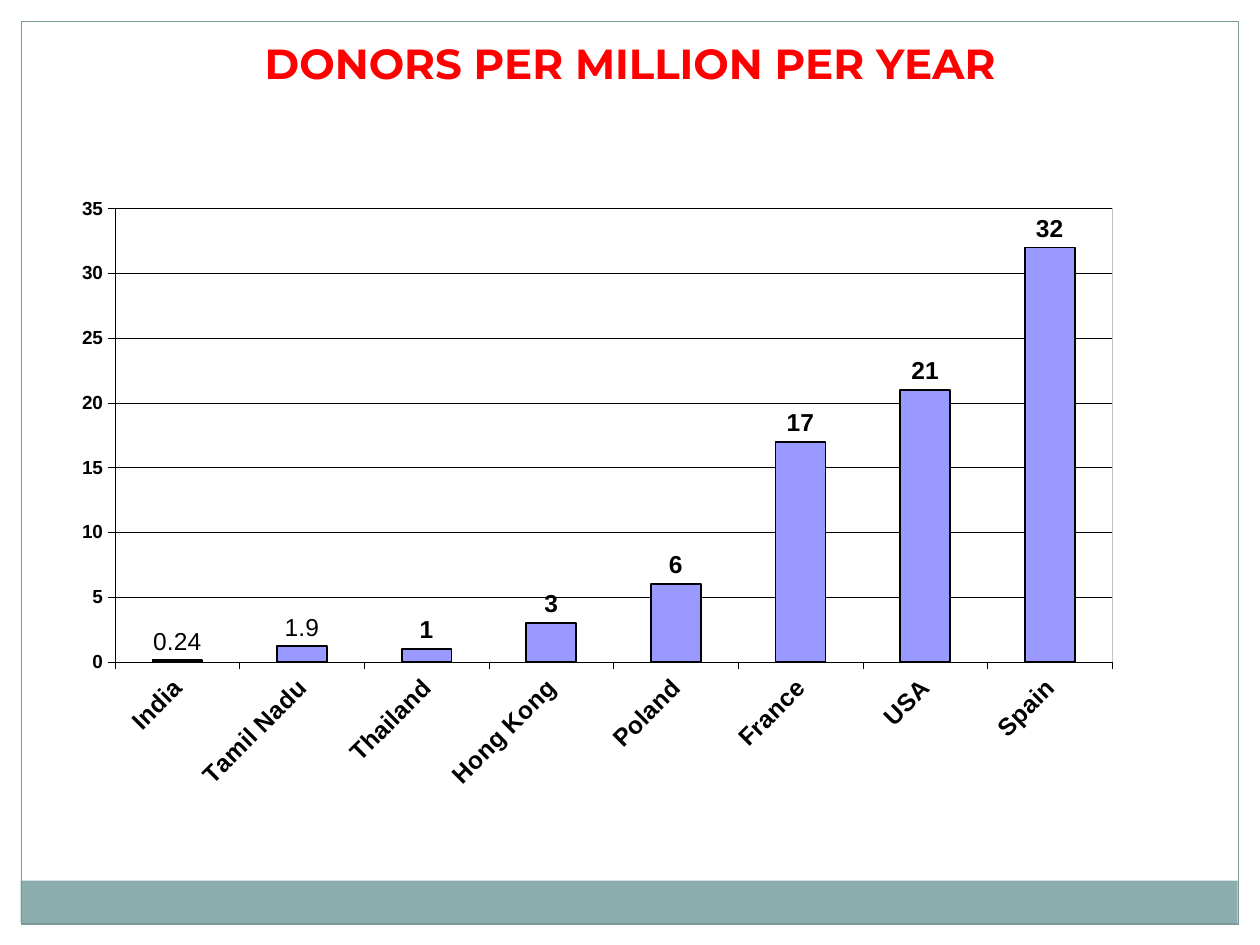
"""Build a slide with a column chart of organ donors per million per year."""
from lxml.etree import SubElement
from pptx import Presentation
from pptx.chart.data import CategoryChartData
from pptx.dml.color import RGBColor
from pptx.enum.chart import XL_CHART_TYPE, XL_LABEL_POSITION, XL_TICK_MARK
from pptx.enum.shapes import MSO_SHAPE
from pptx.enum.text import MSO_AUTO_SIZE, PP_ALIGN
from pptx.oxml import parse_xml
from pptx.oxml.ns import nsdecls, qn
from pptx.util import Pt

BLACK = RGBColor(0x00, 0x00, 0x00)
WHITE = RGBColor(0xFF, 0xFF, 0xFF)
RED = RGBColor(0xFF, 0x00, 0x00)
LAVENDER = RGBColor(0x99, 0x99, 0xFF)
SAGE = RGBColor(0x8C, 0xAD, 0xAE)
FRAME_GREY = RGBColor(0x7C, 0x99, 0x9A)

DONORS = {"India": 0.12, "Tamil Nadu": 1.2, "Thailand": 1, "Hong Kong": 3,
          "Poland": 6, "France": 17, "USA": 21, "Spain": 32}
WRITTEN_LABELS = {0: "0.24", 1: "1.9"}
PLOT_LAYOUT = {"layoutTarget": "inner", "xMode": "edge", "yMode": "edge",
               "x": 0.0542, "y": 0.0982, "w": 0.8633, "h": 0.6167}
BANDS = [
    (0, 0, 720, 12, WHITE),
    (708, 0, 12, 540, WHITE),
    (0, 0, 12, 540, WHITE),
    (11.8, 503.2, 695.5, 24.5, SAGE),
]


def style_font(font, size, bold, color=BLACK, name="Arial"):
    font.size = Pt(size)
    font.bold = bold
    font.color.rgb = color
    font.name = name


def style_line(line, width, color=BLACK):
    line.color.rgb = color
    line.width = Pt(width)


deck = Presentation()
deck.slide_width, deck.slide_height = Pt(720), Pt(540)
slide = deck.slides.add_slide(deck.slide_layouts[6])

for left, top, width, height, color in BANDS:
    band = slide.shapes.add_shape(MSO_SHAPE.RECTANGLE, Pt(left), Pt(top), Pt(width), Pt(height))
    band.shadow.inherit = False
    band.fill.solid()
    band.fill.fore_color.rgb = color
    band.line.fill.background()

border = slide.shapes.add_shape(MSO_SHAPE.RECTANGLE, Pt(12.2), Pt(12.2), Pt(695.5), Pt(515.8))
border.shadow.inherit = False
border.fill.background()
style_line(border.line, 0.75, FRAME_GREY)

donor_data = CategoryChartData()
donor_data.categories = list(DONORS)
donor_data.add_series("Series 1", list(DONORS.values()))
chart = slide.shapes.add_chart(XL_CHART_TYPE.COLUMN_CLUSTERED, Pt(30), Pt(78),
                               Pt(660), Pt(420), donor_data).chart
chart.has_legend = False
chart.has_title = False
style_font(chart.font, 10, False)

countries, rate = chart.category_axis, chart.value_axis
for axis, size in ((countries, 14), (rate, 10.8)):
    style_font(axis.tick_labels.font, size, True)
    style_line(axis.format.line, 0.25)
    axis.major_tick_mark = XL_TICK_MARK.OUTSIDE
    axis.minor_tick_mark = XL_TICK_MARK.NONE
countries.tick_labels.font._element.getparent().getparent().getparent().find(
    qn("a:bodyPr")).set("rot", "-2700000")
rate.minimum_scale, rate.maximum_scale, rate.major_unit = 0, 35, 5
rate.has_major_gridlines = True
style_line(rate.major_gridlines.format.line, 0.25)

columns = chart.plots[0]
columns.gap_width = 150
columns.vary_by_categories = False
donors = columns.series[0]
donors.format.fill.solid()
donors.format.fill.fore_color.rgb = LAVENDER
style_line(donors.format.line, 1)

labels = donors.data_labels
labels.show_value = True
labels.position = XL_LABEL_POSITION.OUTSIDE_END
style_font(labels.font, 14, True)
for index, wording in WRITTEN_LABELS.items():
    label = donors.points[index].data_label
    label.text_frame.text = wording
    label.position = XL_LABEL_POSITION.OUTSIDE_END
    style_font(label.text_frame.paragraphs[0].runs[0].font, 14, False)

plot_area = chart._chartSpace.chart.plotArea
for automatic in plot_area.findall(qn("c:layout")):
    plot_area.remove(automatic)
layout = parse_xml(f"<c:layout {nsdecls('c')}><c:manualLayout/></c:layout>")
for key, value in PLOT_LAYOUT.items():
    SubElement(layout[0], qn(f"c:{key}")).set("val", str(value))
plot_area.insert(0, layout)
plot_area.append(parse_xml(
    f'<c:spPr {nsdecls("c", "a")}><a:noFill/><a:ln w="3175"><a:solidFill>'
    '<a:srgbClr val="C0C0C0"/></a:solidFill></a:ln></c:spPr>'))

heading = slide.shapes.add_textbox(Pt(12), Pt(18), Pt(696), Pt(36)).text_frame
heading.word_wrap = True
heading.auto_size = MSO_AUTO_SIZE.SHAPE_TO_FIT_TEXT
heading.text = "DONORS PER MILLION PER YEAR"
heading.paragraphs[0].alignment = PP_ALIGN.CENTER
style_font(heading.paragraphs[0].runs[0].font, 24, True, RED, "Montserrat")

deck.save("out.pptx")
